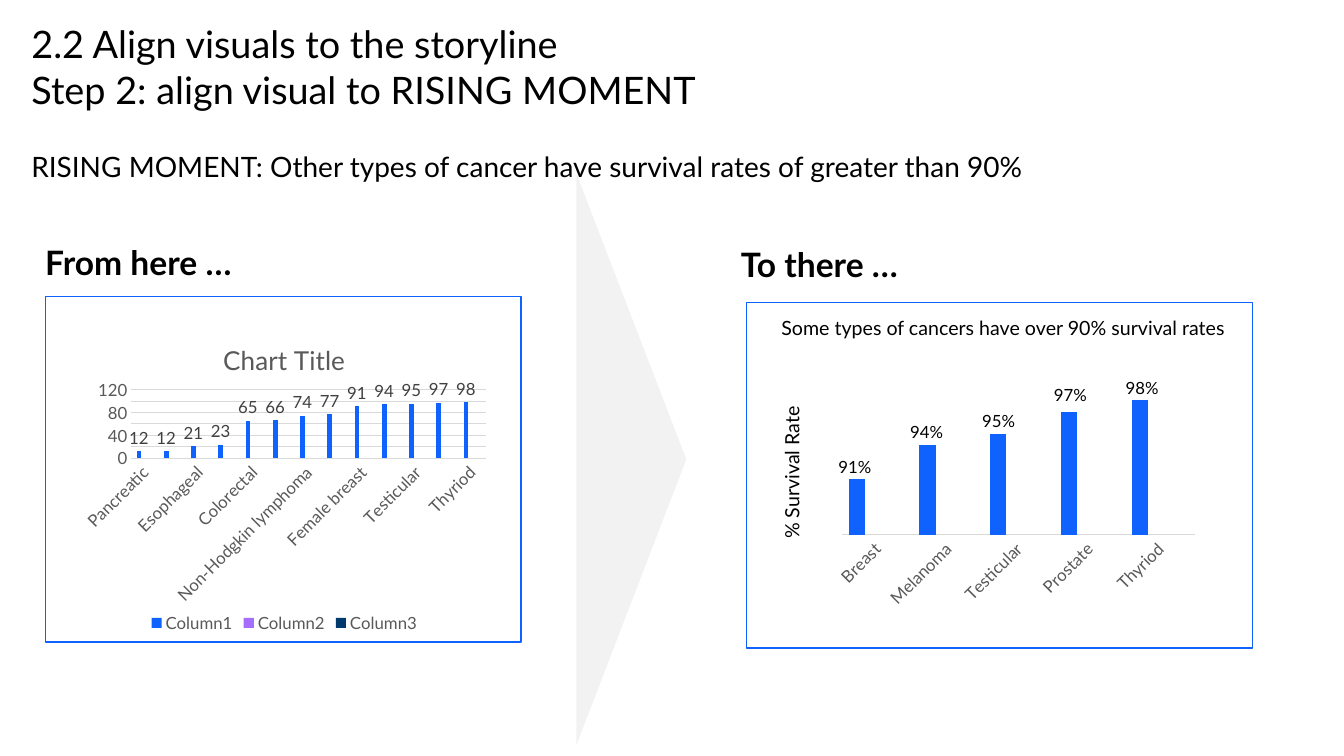
"""Build the slide that aligns a cancer survival chart to the rising moment."""
import dataclasses

import pptx
import pptx.chart.data
import pptx.dml.color
import pptx.enum.chart
import pptx.enum.shapes
import pptx.enum.text
import pptx.oxml
import pptx.oxml.ns
import pptx.util

Cm = pptx.util.Cm
Pt = pptx.util.Pt
RGB = pptx.dml.color.RGBColor.from_string
XL = pptx.enum.chart
ANCHOR = pptx.enum.text.MSO_ANCHOR
SHAPE = pptx.enum.shapes.MSO_SHAPE


@dataclasses.dataclass(frozen=True)
class Theme:
    face: str = "Lato"
    ink: str = "000000"
    axis: str = "595959"
    label: str = "404040"
    grid: str = "D9D9D9"
    arrow: str = "F2F2F2"
    blue: str = "0F62FE"
    series: tuple = ("0F62FE", "A56EFF", "003A6D")
    title: float = 27
    heading: float = 24
    body: float = 20
    chart_title: float = 18.6
    caption: float = 14
    small: float = 12


theme = Theme()


def style(font, size, color=theme.ink, bold=False):
    font.name = theme.face
    font.size = Pt(size)
    font.bold = bold
    font.color.rgb = RGB(color)


def add_text(words, left, top, width, height, size, bold=False, anchor=ANCHOR.TOP):
    box = slide.shapes.add_textbox(Cm(left), Cm(top), Cm(width), Cm(height))
    frame = box.text_frame
    frame.word_wrap = True
    frame.vertical_anchor = anchor
    frame.margin_left = frame.margin_right = frame.margin_top = frame.margin_bottom = 0
    run = frame.paragraphs[0].add_run()
    run.text = words
    style(run.font, size, bold=bold)
    return box


deck = pptx.Presentation()
deck.slide_width, deck.slide_height = Cm(33.87), Cm(19.05)
slide = deck.slides.add_slide(deck.slide_layouts[5])

title = slide.shapes.title
title.left, title.top, title.width, title.height = Cm(0.79), Cm(0.53), Cm(31.9), Cm(2.11)
heading = title.text_frame
heading.auto_size = pptx.enum.text.MSO_AUTO_SIZE.NONE
heading.vertical_anchor = ANCHOR.TOP
heading.margin_left = heading.margin_right = heading.margin_top = heading.margin_bottom = 0
headline = heading.paragraphs[0]
headline.alignment = pptx.enum.text.PP_ALIGN.LEFT
for number, words in enumerate(["2.2 Align visuals to the storyline",
                                "Step 2: align visual to RISING MOMENT"]):
    if number:
        headline.add_line_break()
    run = headline.add_run()
    run.text = words
    style(run.font, theme.title)

arrow = slide.shapes.add_shape(SHAPE.ISOSCELES_TRIANGLE, Cm(8.71), Cm(10.19), Cm(14.4), Cm(2.77))
arrow.rotation = 90
arrow.shadow.inherit = False
arrow.fill.solid()
arrow.fill.fore_color.rgb = RGB(theme.arrow)
arrow.line.fill.background()

for words, left, top in [("From here …", 1.14, 5.41), ("To there …", 18.67, 5.46)]:
    add_text(words, left, top, 8.36, 2.41, theme.heading, True, ANCHOR.MIDDLE)

for left, top, width in [(1.14, 7.47, 11.99), (18.82, 7.62, 12.75)]:
    panel = slide.shapes.add_shape(SHAPE.RECTANGLE, Cm(left), Cm(top), Cm(width), Cm(8.71))
    panel.shadow.inherit = False
    panel.fill.background()
    panel.line.color.rgb = RGB(theme.blue)
    panel.line.width = Pt(1)

before = {"Pancreatic": 12, "Liver": 12, "Esophageal": 21, "Lung": 23, "Colorectal": 65,
          "Leukemia": 66, "Non-Hodgkin lymphoma": 74, "Kidney": 77, "Female breast": 91,
          "Melanoma": 94, "Testicular": 95, "Prostate": 97, "Thyriod": 98}
after = {"Breast": 93, "Melanoma": 96, "Testicular": 97, "Prostate": 99, "Thyriod": 100}

charts = []
for rates, prefix, left, top, gap, low, high in [
        (before, "Column", 1.88, 8.18, 219, 0, 120),
        (after, "Series ", 19.96, 8.23, 84, 88, 102)]:
    survival = pptx.chart.data.CategoryChartData()
    survival.categories = list(rates)
    survival.add_series(f"{prefix}1", list(rates.values()))
    for number in (2, 3):
        survival.add_series(f"{prefix}{number}", [None] * len(rates))
    chart = slide.shapes.add_chart(XL.XL_CHART_TYPE.COLUMN_CLUSTERED, Cm(left), Cm(top),
                                   Cm(10.57), Cm(7.87), survival).chart
    style(chart.font, 10)
    chart.has_title = False
    chart.has_legend = False
    plot = chart.plots[0]
    plot.gap_width, plot.overlap, plot.vary_by_categories = gap, -27, False
    for series, color in zip(plot.series, theme.series):
        series.format.fill.solid()
        series.format.fill.fore_color.rgb = RGB(color)
    for axis in (chart.category_axis, chart.value_axis):
        axis.major_tick_mark = axis.minor_tick_mark = XL.XL_TICK_MARK.NONE
        style(axis.tick_labels.font, theme.small, theme.axis)
    cancers, scale = chart.category_axis, chart.value_axis
    cancers.format.line.color.rgb = RGB(theme.grid)
    cancers.format.line.width = Pt(0.75)
    cancers._element.txPr.find(pptx.oxml.ns.qn("a:bodyPr")).set("rot", "-2700000")
    scale.minimum_scale, scale.maximum_scale = low, high
    scale.format.line.fill.background()
    charts.append(chart)

before_chart, after_chart = charts
before_chart.has_title = True
caption = before_chart.chart_title.text_frame.paragraphs[0].add_run()
caption.text = "Chart Title"
style(caption.font, theme.chart_title, theme.axis)
before_chart.has_legend = True
before_chart.legend.position = XL.XL_LEGEND_POSITION.BOTTOM
before_chart.legend.include_in_layout = False
style(before_chart.legend.font, theme.small, theme.axis)
before_chart.value_axis.major_unit = 20
gridlines = before_chart.value_axis.major_gridlines.format.line
gridlines.color.rgb = RGB(theme.grid)
gridlines.width = Pt(0.75)
for series in before_chart.plots[0].series:
    labels = series.data_labels
    labels.show_value = True
    labels.position = XL.XL_LABEL_POSITION.OUTSIDE_END
    style(labels.font, theme.small, theme.label)

after_chart.value_axis.has_major_gridlines = False
after_chart.value_axis.visible = False
plot_area = after_chart._chartSpace.chart.plotArea
for previous in plot_area.findall(pptx.oxml.ns.qn("c:layout")):
    plot_area.remove(previous)
plot_area.insert(0, pptx.oxml.parse_xml(
    f'<c:layout {pptx.oxml.ns.nsdecls("c")}><c:manualLayout><c:layoutTarget val="inner"/>'
    '<c:xMode val="edge"/><c:yMode val="edge"/><c:x val="0.119"/><c:y val="0.165"/>'
    '<c:w val="0.843"/><c:h val="0.502"/></c:manualLayout></c:layout>'))

add_text("RISING MOMENT: Other types of cancer have survival rates of greater than 90%",
         0.79, 3.78, 26.7, 1.42, theme.body)
add_text("% Survival Rate", 17.5, 10.9, 4.83, 0.53, theme.caption).rotation = 270
for number, (rate, top) in enumerate([("91%", 11.51), ("94%", 10.64), ("95%", 10.34),
                                      ("97%", 9.7), ("98%", 9.53)]):
    add_text(rate, 21.13 + 1.81 * number, top, 0.94, 0.64, theme.small)
add_text("Some types of cancers have over 90% survival rates",
         19.69, 7.95, 12.07, 1.3, theme.caption)

deck.save("out.pptx")
